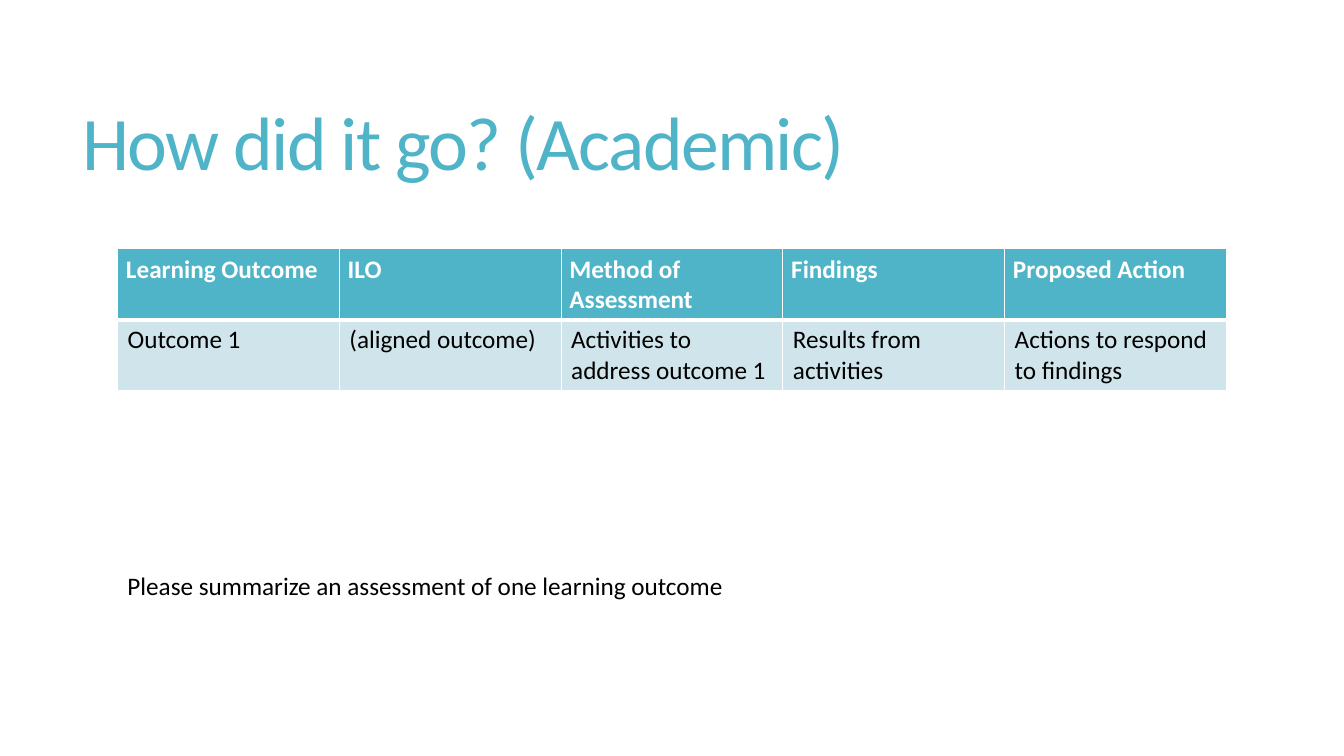
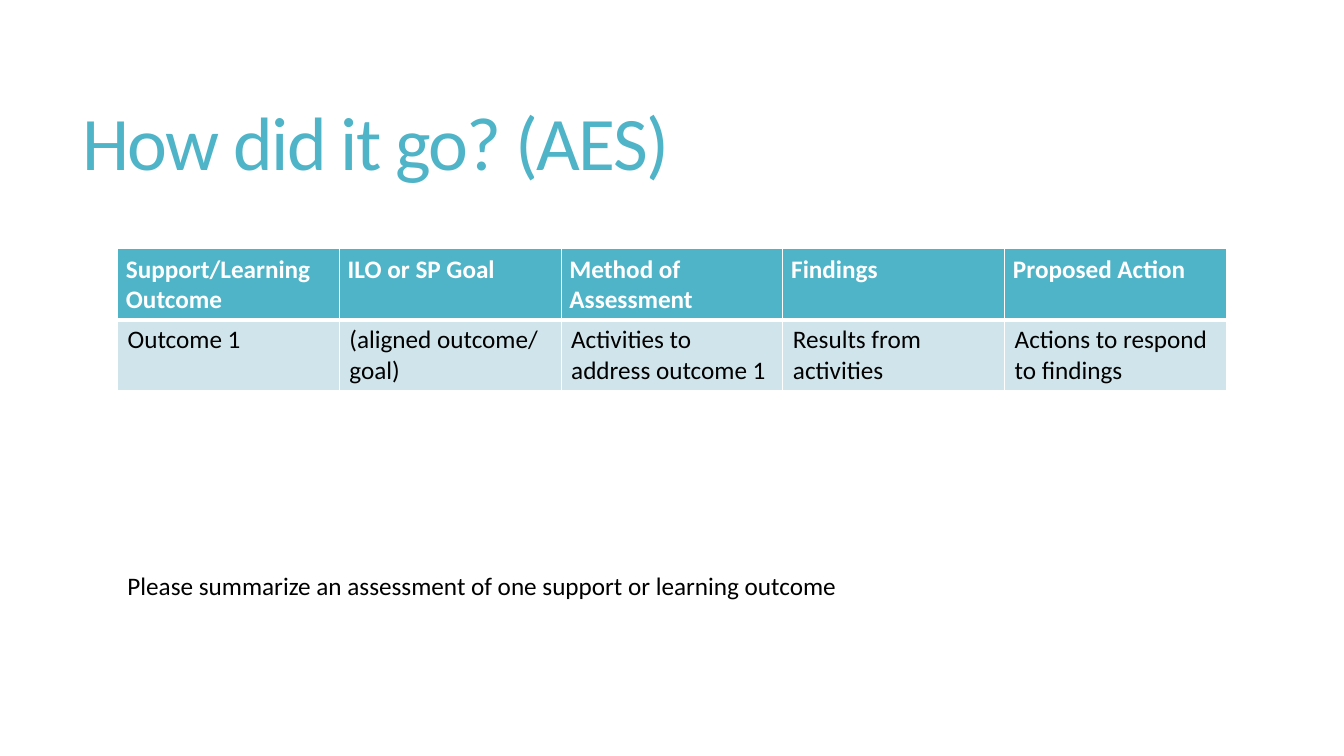
import pptx
import pptx.dml.color
import pptx.enum.text
import pptx.oxml
import pptx.oxml.ns
import pptx.util

PX = 9525  # 96 px to the inch
FONT = "Calibri"
TEAL, PALE, WHITE, BLACK = "50B4C8", "D0E5EB", "FFFFFF", "000000"

TITLE_BOX = (69, 53, 1131, 174)
TABLE_BOX = (112, 237, 1056, 134)
NOTE_BOX = (112, 538, 1056, 38)

SLIDES = [
    (
        "How did it go? (Academic)",
        [
            ["Learning Outcome", "ILO", "Method of Assessment",
             "Findings", "Proposed Action"],
            ["Outcome 1", "(aligned outcome)", "Activities to address outcome 1",
             "Results from activities", "Actions to respond to findings"],
        ],
        "Please summarize an assessment of one learning outcome",
    ),
    (
        "How did it go? (AES)",
        [
            ["Support/Learning Outcome", "ILO or SP Goal", "Method of Assessment",
             "Findings", "Proposed Action"],
            ["Outcome 1", "(aligned outcome/ goal)", "Activities to address outcome 1",
             "Results from activities", "Actions to respond to findings"],
        ],
        "Please summarize an assessment of one support or learning outcome",
    ),
]


def px(n):
    return pptx.util.Emu(round(n * PX))


def rgb(value):
    return pptx.dml.color.RGBColor.from_string(value)


def add_run(p, text, size, color, bold=False):
    r = p.add_run()
    r.text = text
    r.font.name = FONT
    r.font.size = pptx.util.Pt(size)
    r.font.bold = bold
    r.font.color.rgb = rgb(color)
    return r


def add_text_box(s, box):
    tf = s.shapes.add_textbox(*map(px, box)).text_frame
    tf.word_wrap = True
    return tf


def add_title(s, box, text):
    tf = add_text_box(s, box)
    tf.vertical_anchor = pptx.enum.text.MSO_ANCHOR.MIDDLE
    p = tf.paragraphs[0]
    p.line_spacing = 0.85
    r = add_run(p, text, 54, TEAL)
    r.font._element.set("spc", "-120")


def add_note(s, box, text):
    tf = add_text_box(s, box)
    tf.auto_size = pptx.enum.text.MSO_AUTO_SIZE.SHAPE_TO_FIT_TEXT
    add_run(tf.paragraphs[0], text, 18, BLACK)


def set_borders(cell, top, bottom):
    """White borders; top and bottom widths in points, sides 1 pt."""
    tc_pr = cell._tc.get_or_add_tcPr()
    ns = pptx.oxml.ns.nsdecls("a")
    for i, (side, width) in enumerate(zip("LRTB", (1, 1, top, bottom))):
        line = pptx.oxml.parse_xml(
            f'<a:ln{side} {ns} w="{pptx.util.Pt(width)}"><a:solidFill>'
            f'<a:srgbClr val="{WHITE}"/></a:solidFill></a:ln{side}>')
        tc_pr.insert(i, line)


def add_assessment_table(s, box, rows):
    height = box[3] / len(rows)
    width = box[2] / len(rows[0])
    table = s.shapes.add_table(len(rows), len(rows[0]), *map(px, box)).table
    for column in table.columns:
        column.width = px(width)
    for i, texts in enumerate(rows):
        table.rows[i].height = px(height)
        header = i == 0
        for j, text in enumerate(texts):
            cell = table.cell(i, j)
            cell.fill.solid()
            cell.fill.fore_color.rgb = rgb(TEAL if header else PALE)
            if header:
                cell.margin_left = cell.margin_right = px(8)
                cell.margin_top = cell.margin_bottom = px(5)
            set_borders(cell, 1 if header else 3, 3 if header else 1)
            add_run(cell.text_frame.paragraphs[0], text, 18,
                    WHITE if header else BLACK, header)


def add_assessment_slide(prs, title, rows, note):
    s = prs.slides.add_slide(prs.slide_layouts[6])
    add_title(s, TITLE_BOX, title)
    add_assessment_table(s, TABLE_BOX, rows)
    add_note(s, NOTE_BOX, note)


def main():
    prs = pptx.Presentation()
    prs.slide_width, prs.slide_height = px(1280), px(720)
    for title, rows, note in SLIDES:
        add_assessment_slide(prs, title, rows, note)
    prs.save("out.pptx")


if __name__ == "__main__":
    main()
